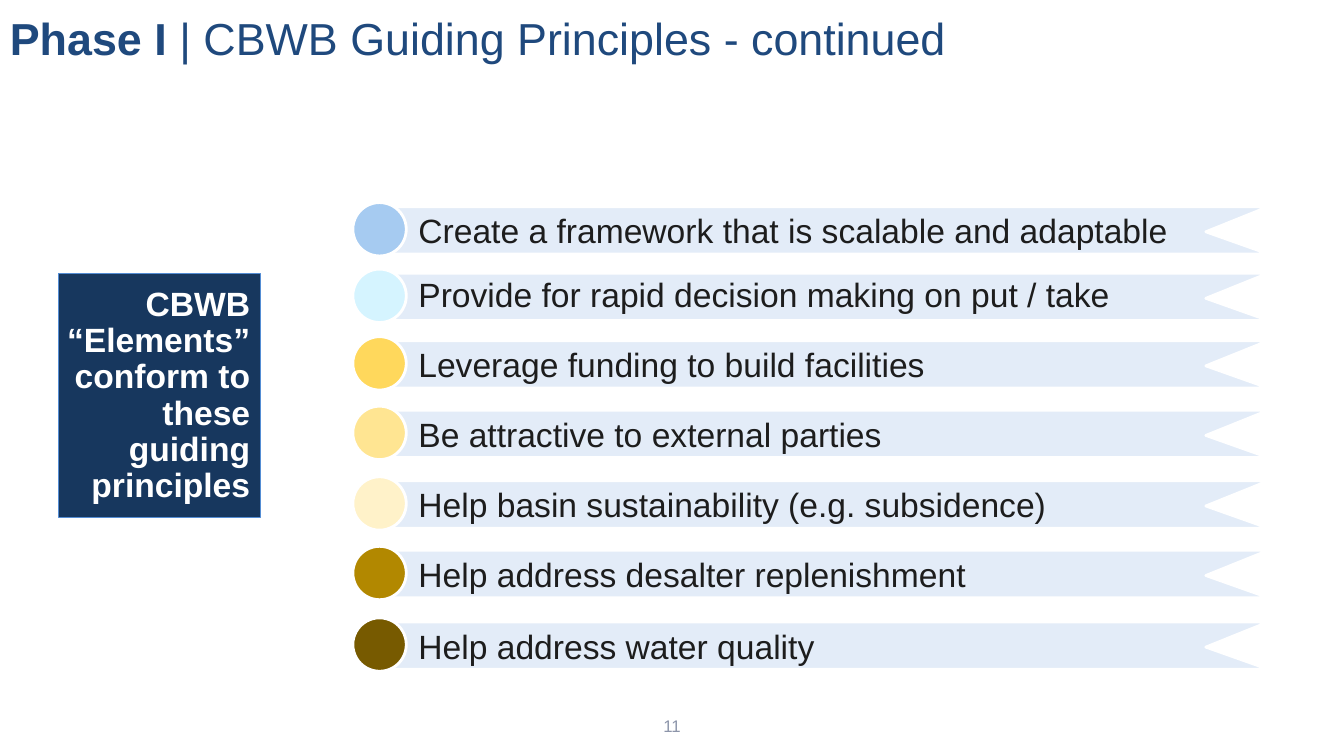
import pptx
import pptx.util
import pptx.dml.color
import pptx.enum.shapes
import pptx.enum.text

Inches = pptx.util.Inches
Pt = pptx.util.Pt
Align = pptx.enum.text.PP_ALIGN
Anchor = pptx.enum.text.MSO_ANCHOR
Shape = pptx.enum.shapes.MSO_SHAPE

COLORS = {
    "title": "1F497D",
    "number": "8D95AA",
    "ribbon": "E3ECF8",
    "text": "1D1D1D",
    "white": "FFFFFF",
    "panel": "17375E",
    "edge": "548DD4",
}

RULES = [
    (2.05, "A6CBF1", "Create a framework that is scalable and adaptable"),
    (2.71, "D5F4FF", "Provide for rapid decision making on put / take"),
    (3.38, "FFD85C", "Leverage funding to build facilities"),
    (4.07, "FFE592", "Be attractive to external parties"),
    (4.77, "FFF2C9", "Help basin sustainability (e.g. subsidence)"),
    (5.46, "B28800", "Help address desalter replenishment"),
    (6.17, "775A00", "Help address water quality"),
]


class Deck:
    font = "Arial"

    def __init__(self):
        self.show = pptx.Presentation()
        self.show.slide_width = Inches(13.33)
        self.show.slide_height = Inches(7.5)
        self.slide = self.show.slides.add_slide(self.show.slide_layouts[6])
        self.shapes = self.slide.shapes

    def tint(self, name):
        return pptx.dml.color.RGBColor.from_string(COLORS.get(name, name))

    def paint(self, shape, fill, line, width):
        shape.shadow.inherit = False
        shape.fill.solid()
        shape.fill.fore_color.rgb = self.tint(fill)
        shape.line.color.rgb = self.tint(line)
        shape.line.width = Pt(width)

    def letter(self, shape, parts, size, color, align=Align.LEFT,
               anchor=Anchor.MIDDLE, pads=(0.1, 0.05, 0.1, 0.05)):
        frame = shape.text_frame
        frame.word_wrap = True
        frame.vertical_anchor = anchor
        (frame.margin_left, frame.margin_top,
         frame.margin_right, frame.margin_bottom) = map(Inches, pads)
        para = frame.paragraphs[0]
        para.alignment = align
        for text, bold in parts:
            run = para.add_run()
            run.text = text
            run.font.name = self.font
            run.font.size = Pt(size)
            run.font.bold = bold
            run.font.color.rgb = self.tint(color)
        return para

    def label(self, box, parts, size, color, align=Align.LEFT):
        shape = self.shapes.add_textbox(*map(Inches, box))
        self.letter(shape, parts, size, color, align)

    def ribbon(self, top, text):
        left, right, notch, low = 3.82, 12.58, 11.96, top + 0.47
        points = [(right, low), (notch, top + 0.25), (right, top), (left, top)]
        build = self.shapes.build_freeform(Inches(left), Inches(low))
        build.add_line_segments([(Inches(x), Inches(y)) for x, y in points])
        shape = build.convert_to_shape()
        self.paint(shape, "ribbon", "white", 2)
        return self.letter(shape, [(text, False)], 24, "text",
                           pads=(0.33, 0.08, 0.16, 0.08))

    def dot(self, top, color):
        shape = self.shapes.add_shape(
            Shape.OVAL, *map(Inches, (3.5, top, 0.53, 0.53)))
        self.paint(shape, color, "white", 2)

    def panel(self, box, text):
        shape = self.shapes.add_shape(Shape.RECTANGLE, *map(Inches, box))
        self.paint(shape, "panel", "edge", 0.25)
        para = self.letter(shape, [(text, True)], 24, "white", Align.RIGHT,
                           Anchor.BOTTOM, (0.05, 0.12, 0.1, 0.12))
        para.line_spacing = 0.9


def main():
    deck = Deck()
    deck.label((0, -0.25, 12, 1.25),
               [("Phase I", True),
                (" | CBWB Guiding Principles - continued", False)],
               32, "title")
    deck.label((5.11, 7, 3.11, 0.4), [("11", False)], 12, "number",
               Align.CENTER)
    for top, color, text in RULES:
        para = deck.ribbon(top, text)
        if text.startswith("Provide"):
            para.line_spacing = 0.9
        deck.dot(top - 0.04, color)
    deck.panel((0.58, 2.71, 2, 2.42),
               "CBWB “Elements” conform to these guiding principles")
    deck.show.save("out.pptx")


if __name__ == "__main__":
    main()
